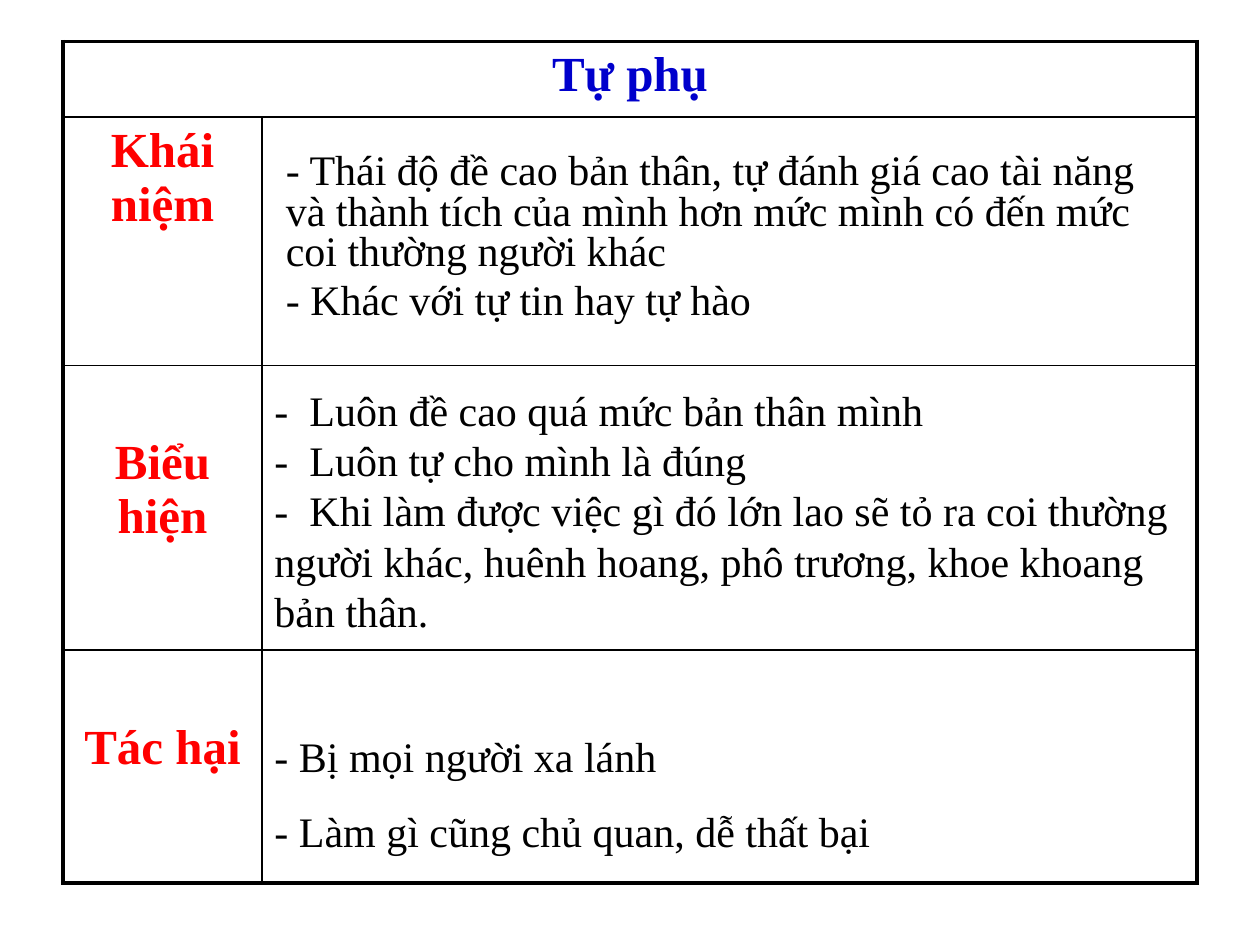
from dataclasses import dataclass

from lxml import etree
from pptx import Presentation
from pptx import util as u
from pptx.dml.color import RGBColor
from pptx.enum import text
from pptx.oxml import ns


@dataclass(frozen=True)
class Theme:
    """Colours, font and sizes of the slide."""
    font: str = "Times New Roman"
    title: str = "0000CC"
    label: str = "FF0000"
    body: str = "000000"
    rule: str = "000000"
    head: int = 28
    size: int = 24
    thick: float = 2.25
    thin: float = 1


THEME = Theme()
COLS = (1.58, 7.42)
ROWS = (0.6, 1.97, 2.26, 1.85)
LABELS = (("Khái niệm", 0.05), ("Biểu hiện", 0.56), ("Tác hại", 0.56))
NOTES = (
    ((2.17, 1.17, 7.08, 1.46), 0.8, 4.8, (
        "- Thái độ đề cao bản thân, tự đánh giá cao tài năng và thành tích "
        "của mình hơn mức mình có đến mức coi thường người khác",
        "- Khác với tự tin hay tự hào")),
    ((2.08, 3, 7.42, 2.1), 1, 0, (
        "-  Luôn đề cao quá mức bản thân mình",
        "-  Luôn tự cho mình là đúng",
        "-  Khi làm được việc gì đó lớn lao sẽ tỏ ra coi thường người khác, "
        "huênh hoang, phô trương, khoe khoang bản thân.")),
    ((2.08, 5.75, 7.25, 1.1), 1, 13.8, (
        "- Bị mọi người xa lánh",
        "- Làm gì cũng chủ quan, dễ thất bại")),
)


def style(para, size, color, bold=False):
    """Format every run of a paragraph."""
    for run in para.runs:
        run.font.name = THEME.font
        run.font.size = u.Pt(size)
        run.font.bold = bold
        run.font.color.rgb = RGBColor.from_string(color)


def border(cell, side, width):
    """Draw one solid edge of a cell."""
    line = etree.SubElement(cell._tc.get_or_add_tcPr(), ns.qn(f"a:ln{side}"),
                            w=str(int(u.Pt(width))))
    fill = etree.SubElement(line, ns.qn("a:solidFill"))
    etree.SubElement(fill, ns.qn("a:srgbClr"), val=THEME.rule)


def frame(table):
    """Give the table a thick outline, thin inner rules and no fill."""
    last = len(ROWS) - 1
    for row in range(len(ROWS)):
        for col in range(len(COLS)):
            cell = table.cell(row, col)
            wide = cell.is_merge_origin
            outer = {"L": col == 0, "R": col == 1 or wide,
                     "T": row == 0, "B": row == last}
            for side, edge in outer.items():
                border(cell, side, THEME.thick if edge else THEME.thin)
            cell.fill.background()


def label(cell, words, color, top=0.05):
    """Write a centred bold heading in a cell."""
    cell.text_frame.text = words
    cell.margin_top = u.Inches(top)
    para = cell.text_frame.paragraphs[0]
    para.alignment = text.PP_ALIGN.CENTER
    para.space_before = u.Pt(5.6)
    style(para, THEME.head, color, True)


def grid(slide):
    """Add the table with its title and row headings."""
    box = map(u.Inches, (0.5, 0.33, sum(COLS), sum(ROWS)))
    table = slide.shapes.add_table(len(ROWS), len(COLS), *box).table
    table.first_row = table.horz_banding = False
    for col, width in zip(table.columns, COLS):
        col.width = u.Inches(width)
    for row, height in zip(table.rows, ROWS):
        row.height = u.Inches(height)
    table.cell(0, 0).merge(table.cell(0, 1))
    label(table.cell(0, 0), "Tự phụ", THEME.title)
    for row, (words, top) in enumerate(LABELS, 1):
        label(table.cell(row, 0), words, THEME.label, top)
    frame(table)


def note(slide, box, lead, gap, lines):
    """Add a text box with one paragraph for each line."""
    body = slide.shapes.add_textbox(*map(u.Inches, box)).text_frame
    body.word_wrap = True
    body.auto_size = text.MSO_AUTO_SIZE.SHAPE_TO_FIT_TEXT
    body.text = "\n".join(lines)
    for para in body.paragraphs:
        para.line_spacing = float(lead)
        para.space_before = u.Pt(gap)
        style(para, THEME.size, THEME.body)


def main():
    """Build the slide and save it."""
    deck = Presentation()
    deck.slide_width, deck.slide_height = u.Inches(10), u.Inches(7.5)
    slide = deck.slides.add_slide(deck.slide_layouts[6])
    grid(slide)
    for item in NOTES:
        note(slide, *item)
    deck.save("out.pptx")


if __name__ == "__main__":
    main()
